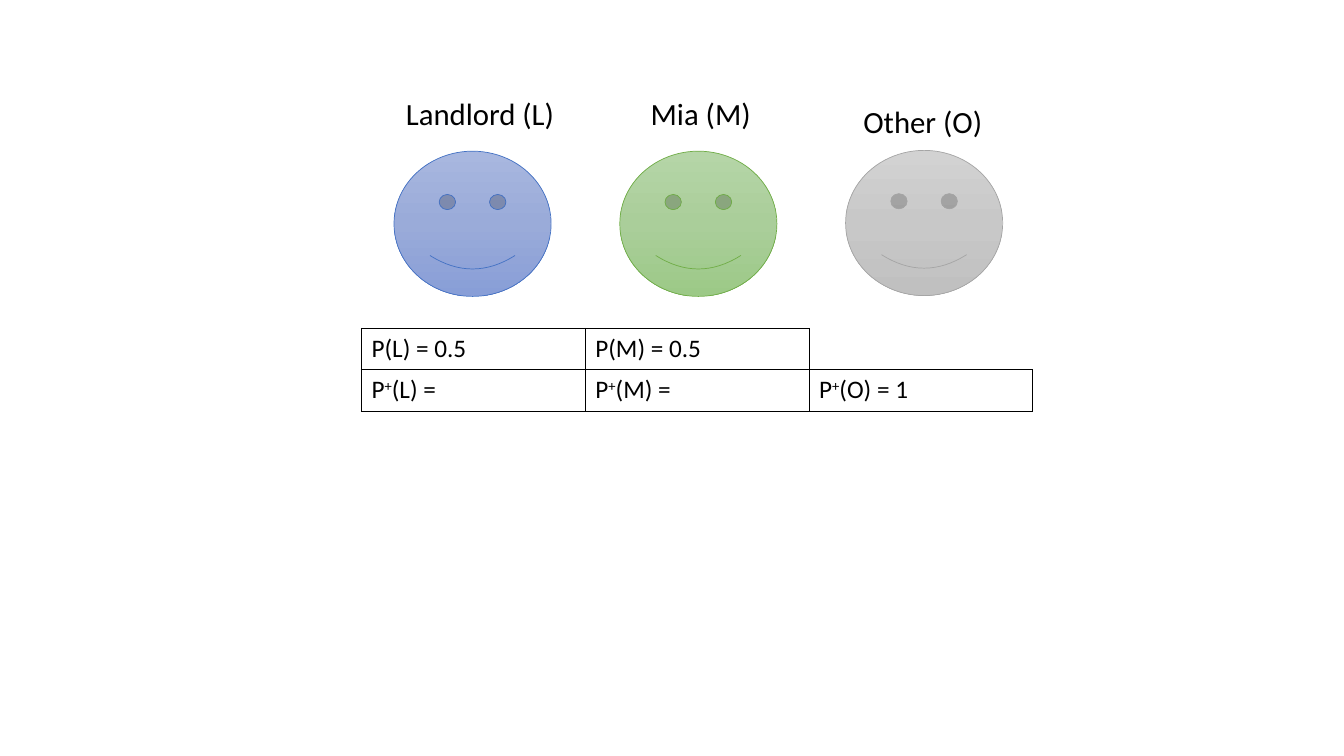
"""Build a slide with three suspects and their probabilities."""
from copy import deepcopy

from pptx import Presentation
from pptx.dml.color import RGBColor
from pptx.enum.shapes import MSO_SHAPE
from pptx.oxml import parse_xml
from pptx.oxml.ns import nsdecls, qn
from pptx.util import Cm, Pt

SMILEY = MSO_SHAPE.SMILEY_FACE
FONT = "Calibri"
BLACK = "000000"

SUSPECTS = [
    {"name": "Landlord (L)", "label": (9.98, 2.26, 4.6), "face_top": 3.81,
     "line": "4472C4", "shades": ("A8B7DF", "9AABD9", "889ED7")},
    {"name": "Mia (M)", "label": (16.15, 2.26, 3.96), "face_top": 3.81,
     "line": "70AD47", "shades": ("B5D5A7", "AACE9A", "9CC987")},
    {"name": "Other (O)", "label": (21.51, 2.46, 3.96), "face_top": 3.79,
     "line": "A5A5A5", "shades": ("D2D2D2", "C8C8C8", "C0C0C0")},
]
TABLES = [
    [["P(L) = 0.5"], ["P(M) = 0.5"]],
    [["P", "+", "(L) ="], ["P", "+", "(M) ="], ["P", "+", "(O) = 1"]],
]

FACE_LEFT, FACE_STEP = 9.93, 5.69
FACE_WIDTH, FACE_HEIGHT = 3.96, 3.66
LABEL_HEIGHT = 1.19
TABLE_LEFT, TABLE_TOP = 9.11, 8.28
COLUMN_WIDTH, ROW_HEIGHT = 5.64, 1.04


def color(value):
    return RGBColor.from_string(value)


def style_font(span, size):
    span.font.name = FONT
    span.font.size = Pt(size)
    span.font.color.rgb = color(BLACK)


def add_face(page, left, top, shades, line):
    face = page.shapes.add_shape(
        SMILEY, Cm(left), Cm(top), Cm(FACE_WIDTH), Cm(FACE_HEIGHT))
    face.shadow.inherit = False
    face.line.color.rgb = color(line)
    face.line.width = Pt(0.5)
    face.fill.gradient()
    face.fill.gradient_angle = 270
    stop_list = face._element.spPr.find(qn("a:gradFill")).find(qn("a:gsLst"))
    stop_list.insert(1, deepcopy(stop_list[0]))
    for stop, shade, position in zip(face.fill.gradient_stops, shades, (0, 0.5, 1)):
        stop.color.rgb = color(shade)
        stop.position = position


def add_label(page, name, left, top, width):
    box = page.shapes.add_textbox(Cm(left), Cm(top), Cm(width), Cm(LABEL_HEIGHT))
    box.text_frame.word_wrap = True
    box.text_frame.text = name
    style_font(box.text_frame.paragraphs[0].runs[0], 22)


def add_borders(cell):
    properties = cell._tc.get_or_add_tcPr()
    for index, side in enumerate(("lnL", "lnR", "lnT", "lnB")):
        properties.insert(index, parse_xml(
            f'<a:{side} {nsdecls("a")} w="{Pt(1)}"><a:solidFill>'
            f'<a:srgbClr val="{BLACK}"/></a:solidFill></a:{side}>'))


def add_probabilities(page, top, entries):
    table = page.shapes.add_table(
        1, len(entries), Cm(TABLE_LEFT), Cm(top),
        Cm(COLUMN_WIDTH * len(entries)), Cm(ROW_HEIGHT)).table
    table.first_row = False
    table.horz_banding = False
    for column, parts in enumerate(entries):
        table.columns[column].width = Cm(COLUMN_WIDTH)
        cell = table.cell(0, column)
        cell.fill.background()
        add_borders(cell)
        para = cell.text_frame.paragraphs[0]
        for part in parts:
            span = para.add_run()
            span.text = part
            style_font(span, 18)
            if part == "+":
                span.font._element.set("baseline", "30000")


def main():
    deck = Presentation()
    deck.slide_width, deck.slide_height = Cm(33.87), Cm(19.05)
    page = deck.slides.add_slide(deck.slide_layouts[6])
    for index, suspect in enumerate(SUSPECTS):
        add_face(page, FACE_LEFT + index * FACE_STEP, suspect["face_top"],
                 suspect["shades"], suspect["line"])
        add_label(page, suspect["name"], *suspect["label"])
    for index, entries in enumerate(TABLES):
        add_probabilities(page, TABLE_TOP + index * ROW_HEIGHT, entries)
    deck.save("out.pptx")


if __name__ == "__main__":
    main()
